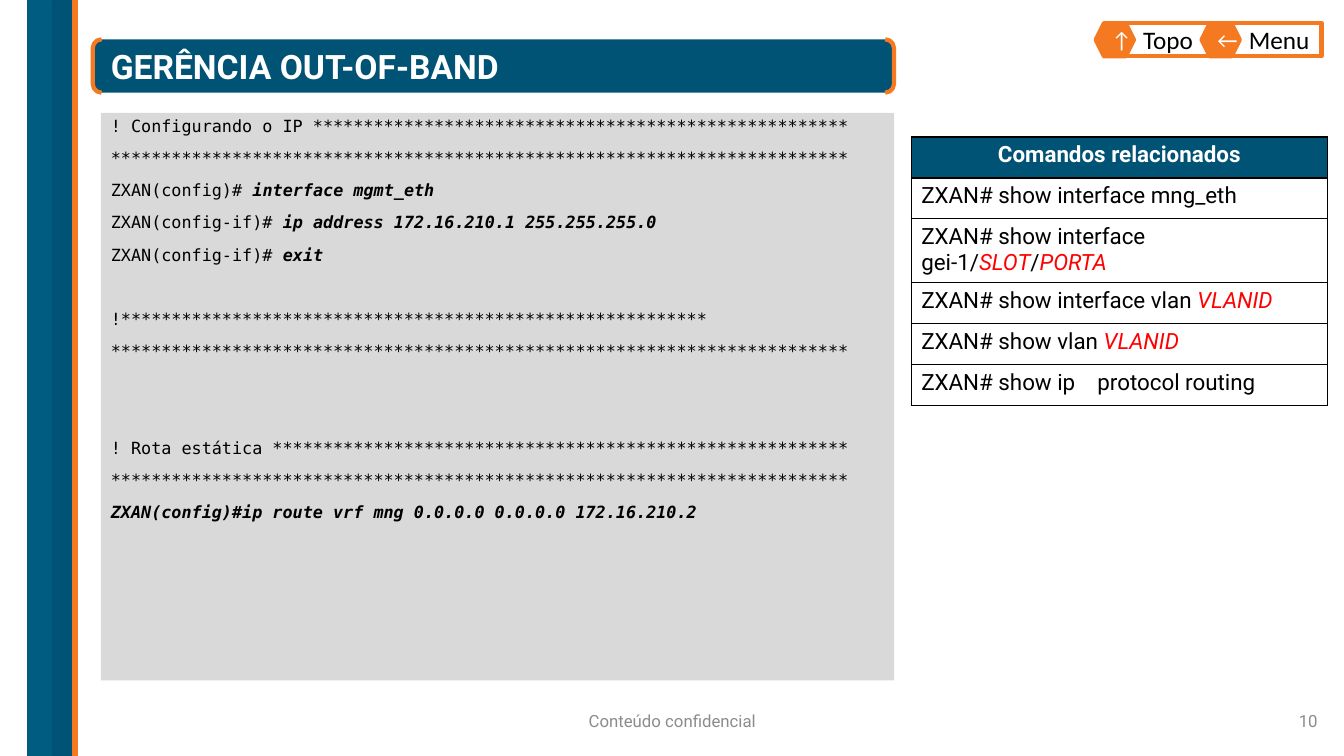
from lxml.etree import SubElement
from pptx import Presentation
from pptx.dml.color import RGBColor
from pptx.enum.shapes import MSO_SHAPE as Preset
from pptx.enum.text import MSO_ANCHOR as Anchor, MSO_AUTO_SIZE as AutoSize, PP_ALIGN as Align
from pptx.oxml.ns import qn
from pptx.util import Inches, Pt

COLUMNS, ROWS = 160, 90
WIDTH, HEIGHT = Inches(13.333), Inches(7.5)
NAVY, ORANGE, WHITE, BLACK = "005374", "F47920", "FFFFFF", "000000"
GREY, SILVER, RED = "8C8C8C", "D9D9D9", "FF0000"
STRIPES = [
    (3.24, 5.4, "005C80", "005D7E"),
    (6.24, 2.4, "005276", "005274"),
    (8.64, 0.6, ORANGE, ORANGE),
]
BUTTONS = [("↑", "Topo"), ("←", "Menu")]
RULE = "*" * 73
CODE = [
    (10, ["! Configurando o IP " + "*" * 53]),
    (10, [RULE]),
    (10, ["ZXAN(config)# ", "interface mgmt_eth"]),
    (10, ["ZXAN(config-if)# ", "ip address 172.16.210.1 255.255.255.0"]),
    (10, ["ZXAN(config-if)# ", "exit"]),
    (33, ["!" + "*" * 58]),
    (10, [RULE]),
    (56, ["! Rota estática " + "*" * 57]),
    (10, [RULE]),
    (10, ["", "ZXAN(config)#ip route vrf mng 0.0.0.0 0.0.0.0 172.16.210.2"]),
]
COMMANDS = [
    ["ZXAN# show interface mng_eth"],
    ["ZXAN# show interface gei-1/", "SLOT", "/", "PORTA"],
    ["ZXAN# show interface vlan ", "VLANID"],
    ["ZXAN# show vlan ", "VLANID"],
    ["ZXAN# show ip    protocol routing"],
]


def color(value):
    """Turn a hex string into a colour."""
    return RGBColor.from_string(value)


def grid(left, top, width, height):
    """Turn grid columns and rows into slide lengths."""
    across, down = WIDTH / COLUMNS, HEIGHT / ROWS
    return [round(length) for length in (left * across, top * down, width * across, height * down)]


def move(shape, *cell):
    """Put a placeholder on the grid."""
    shape.left, shape.top, shape.width, shape.height = grid(*cell)


def paint(shape, fill):
    """Give a shape or a cell a solid fill."""
    shape.fill.solid()
    shape.fill.fore_color.rgb = color(fill)


def add_block(page, preset, cell, fill, line, weight):
    """Add a filled and outlined preset shape."""
    block = page.shapes.add_shape(preset, *grid(*cell))
    block.shadow.inherit = False
    paint(block, fill)
    block.line.color.rgb = color(line)
    block.line.width = Pt(weight)
    return block


def set_font(para, name, size, ink, bold=False, align=Align.LEFT):
    """Set the font and alignment of a whole paragraph."""
    para.alignment = align
    font = para.font
    font.name, font.size, font.bold = name, Pt(size), bold
    font.color.rgb = color(ink)


def write(shape, text, name, size, ink, bold=False, align=Align.LEFT):
    """Write one line, centred vertically."""
    frame = shape.text_frame
    frame.word_wrap = True
    frame.vertical_anchor = Anchor.MIDDLE
    para = frame.paragraphs[0]
    para.text = text
    set_font(para, name, size, ink, bold, align)


def add_spans(para, texts, ink, bold):
    """Add runs, stressing every second one."""
    for index, text in enumerate(texts):
        if text:
            span = para.add_run()
            span.text = text
            if index % 2:
                span.font.italic = True
                span.font.bold = bold
                span.font.color.rgb = color(ink)


def add_label(page, cell, text, align):
    """Add a small grey footer text."""
    write(page.shapes.add_textbox(*grid(*cell)), text, "Roboto", 12, GREY, align=align)


def add_button(page, left, arrow, text):
    """Add a navigation tab with its arrow hexagon."""
    tab = add_block(page, Preset.RECTANGLE, (left, 2.76, 12.6, 3.96), WHITE, ORANGE, 3)
    tint = tab.fill._xPr.find(qn("a:solidFill"))[0]
    SubElement(tint, qn("a:alpha"), val="90000")
    write(tab, text, "Calibri", 18, BLACK)
    frame = tab.text_frame
    frame.margin_left = Inches(0.33)
    frame.margin_top = frame.margin_right = frame.margin_bottom = Inches(0.07)
    badge = add_block(page, Preset.HEXAGON, (left - 1.68, 2.76, 4.56, 3.96), ORANGE, ORANGE, 3)
    write(badge, arrow, "Calibri", 16, WHITE, align=Align.CENTER)


def fill_code(body):
    """Write the console listing in the body placeholder."""
    move(body, 12, 13.44, 94.44, 67.56)
    paint(body, SILVER)
    frame = body.text_frame
    frame.auto_size = AutoSize.NONE
    frame.vertical_anchor = Anchor.TOP
    for index, (gap, texts) in enumerate(CODE):
        para = frame.add_paragraph() if index else frame.paragraphs[0]
        para.line_spacing = 0.9
        para.space_before = Pt(gap if index else 0)
        props = para._p.get_or_add_pPr()
        props.set("marL", "0")
        props.set("indent", "0")
        SubElement(props, qn("a:buNone"))
        set_font(para, "DejaVu Sans Mono", 12, BLACK)
        add_spans(para, texts, BLACK, True)


def border(cell):
    """Draw a thin black line on each side of a cell."""
    props = cell._tc.get_or_add_tcPr()
    for index, side in enumerate(("a:lnL", "a:lnR", "a:lnT", "a:lnB")):
        line = props.makeelement(qn(side), {"w": str(Pt(1))})
        fill = SubElement(line, qn("a:solidFill"))
        SubElement(fill, qn("a:srgbClr"), val=BLACK)
        props.insert(index, line)


def add_commands(page):
    """Add the table of related commands."""
    rows = [["Comandos relacionados"], *COMMANDS]
    row_height = 4.87
    area = grid(108.48, 16.32, 49.56, row_height * len(rows))
    table = page.shapes.add_table(len(rows), 1, *area).table
    for index, texts in enumerate(rows):
        cell = table.cell(index, 0)
        paint(cell, WHITE if index else NAVY)
        border(cell)
        para = cell.text_frame.paragraphs[0]
        if index:
            set_font(para, "Roboto", 16, BLACK)
        else:
            set_font(para, "Roboto", 16, WHITE, True, Align.CENTER)
        add_spans(para, texts, RED, False)


def main():
    """Build the slide and save it."""
    deck = Presentation()
    deck.slide_width, deck.slide_height = WIDTH, HEIGHT
    page = deck.slides.add_slide(deck.slide_layouts[1])
    title, body = page.placeholders
    add_block(page, Preset.DOUBLE_BRACKET, (11.04, 4.68, 95.4, 6.36), NAVY, ORANGE, 3)
    for left, width, fill, line in STRIPES:
        add_block(page, Preset.RECTANGLE, (left, 0, width, ROWS), fill, line, 1)
    page.shapes.element.append(title.element)
    move(title, 12, 4.68, 94.44, 6.36)
    write(title, "GERÊNCIA OUT-OF-BAND", "Roboto", 24, WHITE, True)
    title.text_frame.auto_size = AutoSize.NONE
    add_label(page, (53.04, 83.4, 54, 4.8), "Conteúdo confidencial", Align.CENTER)
    add_label(page, (149.04, 83.4, 9, 4.8), "10", Align.RIGHT)
    for index, (arrow, text) in enumerate(BUTTONS):
        add_button(page, 132.12 + 12.6 * index, arrow, text)
    fill_code(body)
    add_commands(page)


    deck.save("out.pptx")


if __name__ == "__main__":
    main()
